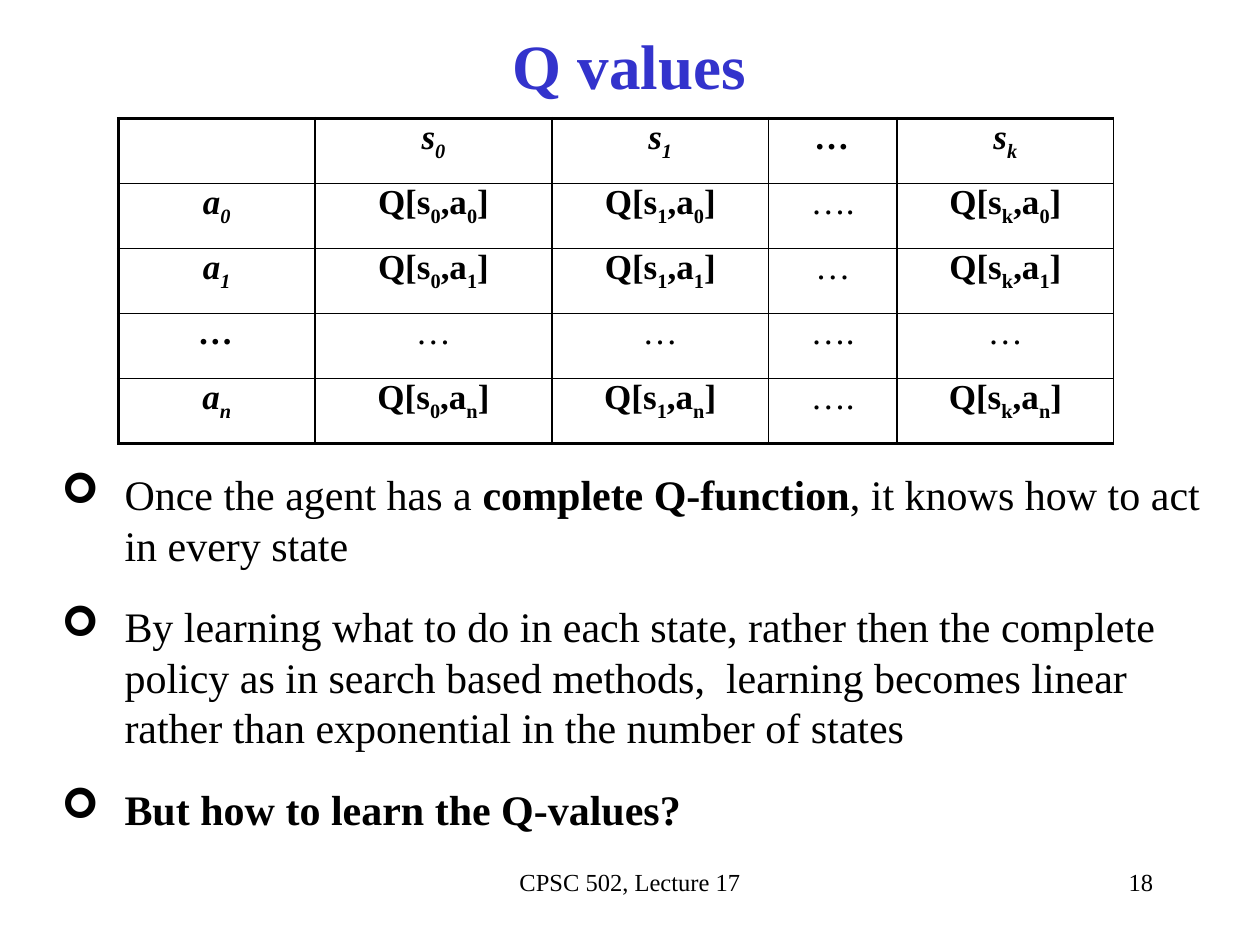
from lxml import etree
from pptx import Presentation
from pptx.dml.color import RGBColor
from pptx.enum.text import MSO_ANCHOR, PP_ALIGN
from pptx.oxml.ns import qn
from pptx.util import Inches, Pt

CENTER, RIGHT = PP_ALIGN.CENTER, PP_ALIGN.RIGHT
TOP, MIDDLE = MSO_ANCHOR.TOP, MSO_ANCHOR.MIDDLE
FONT, BLACK, BLUE = "Times New Roman", "000000", "3333CC"
THIN, THICK = 1, 2.25
DOTS = "…"
STATES = ["0", "1", DOTS, "k"]
ACTIONS = ["0", "1", DOTS, "n"]
DOTS_COLUMN = ["….", "…", "….", "…."]
COL_WIDTHS = [1.56, 1.88, 1.72, 1.02, 1.72]
ROW_HEIGHT = 0.516
BULLETS = [
    [("Once the agent has a ", False), ("complete Q-function", True),
     (", it knows how to act in every state", False)],
    [("By learning what to do in each state, rather then the complete policy "
      "as in search based methods,  learning becomes linear rather than "
      "exponential in the number of states", False)],
    [("But how to learn the Q-values?", True)],
]


def rgb(value):
    """Turn a hex string into a colour."""
    return RGBColor.from_string(value)


def add_run(p, text, size, bold=False, italic=False, color=BLACK):
    """Add one formatted run to a paragraph."""
    r = p.add_run()
    r.text = text
    r.font.name, r.font.size = FONT, Pt(size)
    r.font.bold, r.font.italic = bold, italic
    r.font.color.rgb = rgb(color)
    return r


def add_text_box(s, left, top, width, height):
    """Add a wrapping text box and return its text frame."""
    box = s.shapes.add_textbox(*map(Inches, (left, top, width, height)))
    box.text_frame.word_wrap = True
    return box.text_frame


def set_title(s, text):
    """Place and fill the title placeholder."""
    sp = s.shapes.title
    sp.left, sp.top, sp.width, sp.height = map(Inches, (0.33, 0.17, 9.33, 0.75))
    sp.text_frame.vertical_anchor = MIDDLE
    p = sp.text_frame.paragraphs[0]
    p.alignment, p.line_spacing = CENTER, 0.9
    add_run(p, text, 36, bold=True, color=BLUE)


def set_bullet(p, char):
    """Give a paragraph a hanging bullet."""
    pPr = p._p.get_or_add_pPr()
    pPr.set("marL", str(Inches(0.5)))
    pPr.set("indent", str(-Inches(0.5)))
    color = etree.SubElement(pPr, qn("a:buClr"))
    etree.SubElement(color, qn("a:srgbClr"), val=BLACK)
    etree.SubElement(pPr, qn("a:buFont"), typeface="Wingdings")
    etree.SubElement(pPr, qn("a:buChar"), char=char)


def add_bullets(s, items):
    """Add the bulleted body text."""
    tf = add_text_box(s, 0.39, 3.67, 9.37, 2.52)
    for i, runs in enumerate(items):
        p = tf.add_paragraph() if i else tf.paragraphs[0]
        p.space_before = Pt(18)
        set_bullet(p, "➢")
        for text, bold in runs:
            add_run(p, text, 24, bold=bold)


def add_footer(s, text, left, width, align):
    """Add one line of footer text."""
    p = add_text_box(s, left, 6.83, width, 0.5).paragraphs[0]
    p.alignment = align
    add_run(p, text, 14)


def cell_parts(row, col):
    """Return a cell's text pieces, every second one a subscript."""
    if row == col == 0:
        return []
    if row == 0 or col == 0:
        name, index = ("s", STATES[col - 1]) if row == 0 else ("a", ACTIONS[row - 1])
        return [DOTS] if index == DOTS else [name, index]
    state, action = STATES[col - 1], ACTIONS[row - 1]
    if state == DOTS:
        return [DOTS_COLUMN[row - 1]]
    if action == DOTS:
        return [DOTS]
    return ["Q[s", state, ",a", action, "]"]


def set_borders(cell, widths):
    """Draw solid borders in left, right, top, bottom order."""
    tcPr = cell._tc.get_or_add_tcPr()
    for side, width in zip("LRTB", widths):
        ln = etree.SubElement(tcPr, qn(f"a:ln{side}"), w=str(Pt(width)))
        fill = etree.SubElement(ln, qn("a:solidFill"))
        etree.SubElement(fill, qn("a:srgbClr"), val=BLACK)


def fill_cell(cell, parts, header):
    """Write the text pieces of one cell."""
    cell.margin_left = cell.margin_right = Inches(0.1)
    cell.margin_top = cell.margin_bottom = 0
    cell.vertical_anchor = TOP
    p = cell.text_frame.paragraphs[0]
    p.alignment, p.space_before = CENTER, Pt(18)
    for i, text in enumerate(parts):
        r = add_run(p, text, 20, bold=header or len(parts) > 1, italic=header)
        if i % 2:
            r.font._element.set("baseline", "-25000")


def add_q_table(s):
    """Add the table of Q values by state and action."""
    rows, cols = len(ACTIONS) + 1, len(STATES) + 1
    table = s.shapes.add_table(rows, cols, Inches(0.94), Inches(0.94),
                               Inches(sum(COL_WIDTHS)),
                               Inches(rows * ROW_HEIGHT)).table
    table.first_row = table.horz_banding = False
    for col, width in zip(table.columns, COL_WIDTHS):
        col.width = Inches(width)
    for i, row in enumerate(table.rows):
        row.height = Inches(ROW_HEIGHT)
        for j, cell in enumerate(row.cells):
            fill_cell(cell, cell_parts(i, j), header=i == 0 or j == 0)
            set_borders(cell, [THICK if j == 0 else THIN, THIN,
                               THICK if i == 0 else THIN,
                               THICK if i == rows - 1 else THIN])
            cell.fill.background()


def main():
    """Build and save the slide."""
    prs = Presentation()
    prs.slide_width, prs.slide_height = Inches(10), Inches(7.5)
    s = prs.slides.add_slide(prs.slide_layouts[5])
    set_title(s, "Q values")
    add_bullets(s, BULLETS)
    add_q_table(s)
    add_footer(s, "18", 7.17, 2.08, RIGHT)
    add_footer(s, "CPSC 502, Lecture 17", 3.42, 3.16, CENTER)
    prs.save("out.pptx")


if __name__ == "__main__":
    main()
